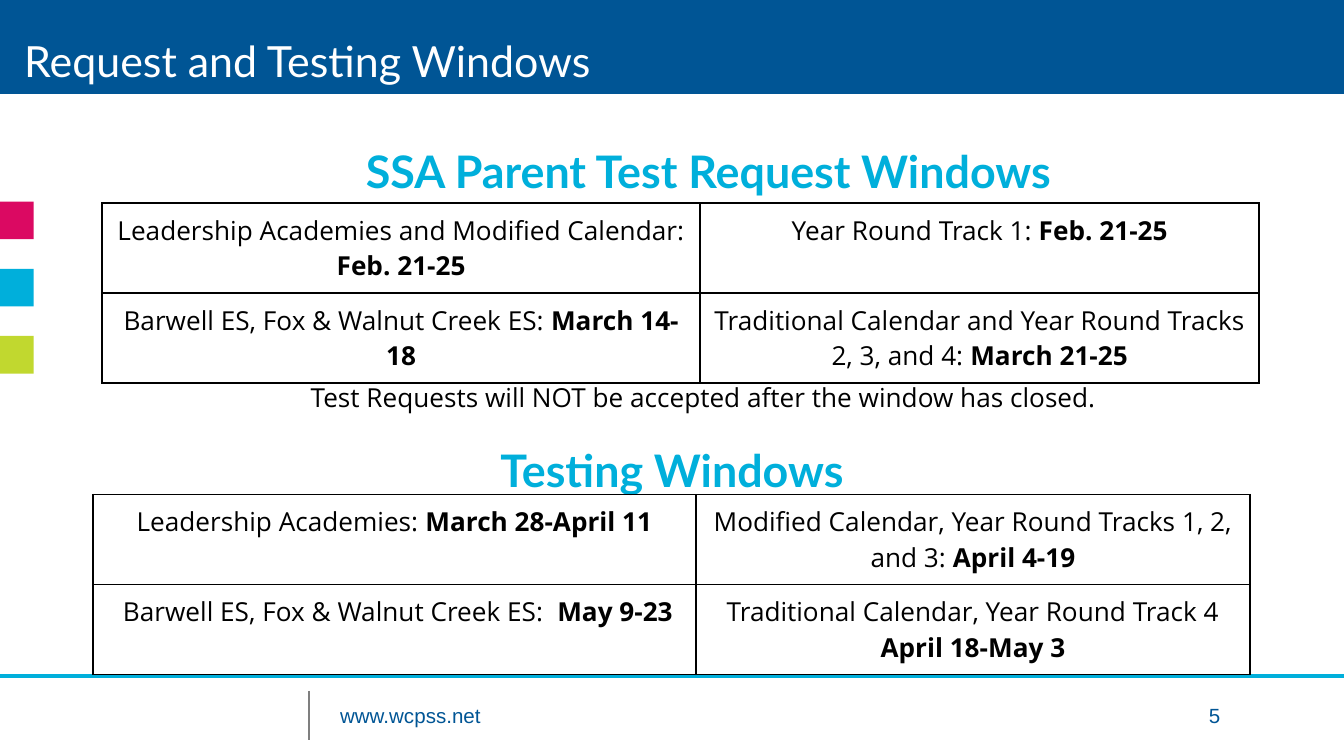
from lxml import etree
from pptx import Presentation, util as u
from pptx.dml.color import RGBColor
from pptx.enum import shapes as sh, text as tx
from pptx.oxml.ns import qn

PX = 9144  # 100 px to the inch
HUES = {"navy": "005595", "cyan": "00AFDB", "pink": "DB0962", "lime": "C1D82F",
        "grey": "7F7F7F", "white": "FFFFFF", "black": "000000"}

ASK = [
    [[[("Leadership Academies and Modified Calendar: ", False), ("Feb. 21-25", True)]],
     [[("Year Round Track 1: ", False), ("Feb. 21-25", True)]]],
    [[[("Barwell ES, Fox & Walnut Creek ES: ", False), ("March 14-18", True)]],
     [[("Traditional Calendar and Year Round Tracks 2, 3, and 4: ", False),
       ("March 21-25", True)]]],
]
TEST = [
    [[[("Leadership Academies: ", False), ("March 28-April 11", True)]],
     [[("Modified Calendar, Year Round Tracks 1, 2, and 3: ", False),
       ("April 4-19", True)]]],
    [[[(" Barwell ES, Fox & Walnut Creek ES:  ", False), ("May 9-23", True)]],
     [[("Traditional Calendar, Year Round Track 4", False)],
      [("April 18-May 3", True)]]],
]


def px(*nums):
    return [u.Emu(n * PX) for n in nums]


def hue(name):
    return RGBColor.from_string(HUES[name])


def style(font, face, size, color, bold=None):
    font.name, font.size, font.bold = face, u.Pt(size), bold
    font.color.rgb = hue(color)


def rect(slide, box, color):
    shape = slide.shapes.add_shape(sh.MSO_SHAPE.RECTANGLE, *px(*box))
    shape.shadow.inherit = False
    shape.fill.solid()
    shape.fill.fore_color.rgb = hue(color)
    shape.line.fill.background()


def rule(slide, ends, color, width):
    line = slide.shapes.add_connector(sh.MSO_CONNECTOR.STRAIGHT, *px(*ends))
    line.line.color.rgb = hue(color)
    line.line.width = u.Pt(width)
    etree.SubElement(line._element.spPr, qn("a:effectLst"))


def label(slide, box, words, pad, anchor, align):
    """Add a one-paragraph text box and return its paragraph."""
    frame = slide.shapes.add_textbox(*px(*box)).text_frame
    frame.word_wrap = True
    frame.vertical_anchor = anchor
    frame.margin_left = frame.margin_right = px(pad[0])[0]
    frame.margin_top = frame.margin_bottom = px(pad[1])[0]
    para = frame.paragraphs[0]
    para.text, para.alignment = words, align
    return para


def border(cell):
    props = cell._tc.get_or_add_tcPr()
    for spot, side in enumerate(("lnL", "lnR", "lnT", "lnB")):
        line = etree.Element(qn("a:" + side), w=str(u.Pt(1)))
        fill = etree.SubElement(line, qn("a:solidFill"))
        etree.SubElement(fill, qn("a:srgbClr"), val=HUES["black"])
        props.insert(spot, line)


def banner(slide, box, words):
    left, top, width, height = box
    rect(slide, box, "navy")
    para = label(slide, (left + 14, top, width - 100, height + 24), words, (4, 2),
                 tx.MSO_ANCHOR.MIDDLE, tx.PP_ALIGN.LEFT)
    para.line_spacing = 0.9
    style(para.font, "Lato", 23, "white")


def tabs(slide, box):
    left, top, width, height = box
    for i, color in enumerate(("pink", "cyan", "lime")):
        rect(slide, (left, top + i * 50, width, height), color)


def footer(slide, box, site, page):
    left, top, width, height = box
    rule(slide, (left, top, left + width, top), "cyan", 2)
    rule(slide, (left + 230, top + 11, left + 230, top + 48), "grey", 0.75)
    para = label(slide, (left + 249, top + 18, 683, 21), f"{site}\t{page}", (4, 2),
                 tx.MSO_ANCHOR.TOP, tx.PP_ALIGN.LEFT)
    # Right tab for the page number
    stops = etree.SubElement(para._p.get_or_add_pPr(), qn("a:tabLst"))
    etree.SubElement(stops, qn("a:tab"), pos=str(655 * PX), algn="r")
    style(para.font, "Arial", 11, "navy")


def heading(slide, box, words):
    para = label(slide, box, words, (10, 10), tx.MSO_ANCHOR.MIDDLE, tx.PP_ALIGN.CENTER)
    style(para.font, "Lato", 24, "cyan", True)


def note(slide, box, words):
    para = label(slide, box, words, (10, 10), tx.MSO_ANCHOR.TOP, tx.PP_ALIGN.CENTER)
    style(para.font, "Open Sans", 14, "black")


def grid(slide, spot, cols, high, data):
    box = px(*spot, sum(cols), high * len(data))
    table = slide.shapes.add_table(len(data), len(cols), *box).table
    table.first_row = table.horz_banding = False
    for col, width in zip(table.columns, px(*cols)):
        col.width = width
    for row, cells in zip(table.rows, data):
        row.height = px(high)[0]
        for cell, paras in zip(row.cells, cells):
            cell.fill.background()
            border(cell)
            cell.margin_left = cell.margin_right = px(7)[0]
            cell.margin_top = cell.margin_bottom = px(7)[0]
            for i, parts in enumerate(paras):
                frame = cell.text_frame
                para = frame.add_paragraph() if i else frame.paragraphs[0]
                para.alignment = tx.PP_ALIGN.CENTER
                for words, bold in parts:
                    run = para.add_run()
                    run.text = words
                    style(run.font, "Open Sans", 14, "black", bold)


def main():
    deck = Presentation()
    deck.slide_width = px(1000)[0]
    deck.slide_height = deck.slide_width * 9 // 16
    slide = deck.slides.add_slide(deck.slide_layouts[6])

    # Frame
    tabs(slide, (0, 150, 25, 28))
    footer(slide, (0, 503, 1000, 59), "www.wcpss.net", 5)
    banner(slide, (0, 0, 1000, 70), "Request and Testing Windows")

    # Request windows
    heading(slide, (223, 99, 608, 56), "SSA Parent Test Request Windows")
    grid(slide, (76, 151), (445, 416), 67, ASK)
    note(slide, (121, 274, 810, 44),
         "Test Requests will NOT be accepted after the window has closed. ")

    # Testing windows
    heading(slide, (176, 318, 648, 63), "Testing Windows")
    grid(slide, (69, 368), (449, 412), 67, TEST)

    deck.save("out.pptx")


if __name__ == "__main__":
    main()
